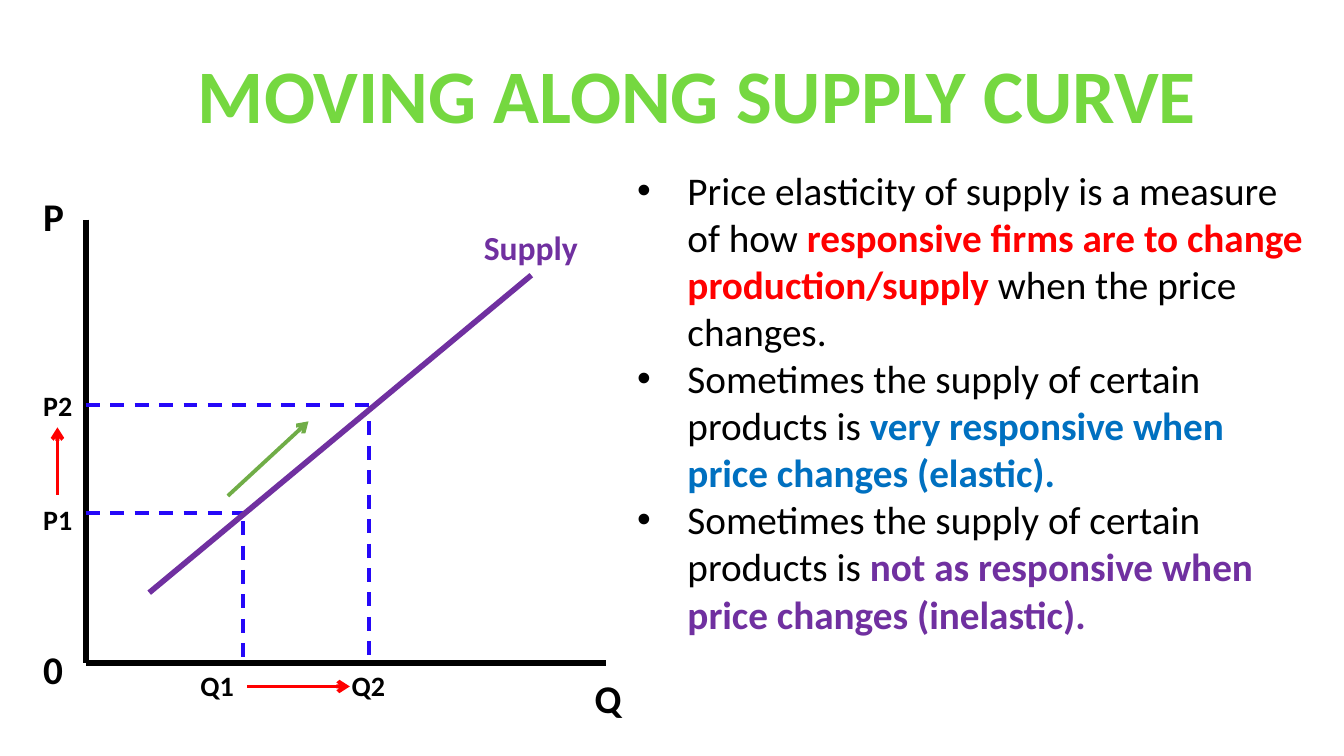
from dataclasses import dataclass

from pptx import Presentation
from pptx import util as u
from pptx.dml import color
from pptx.enum import dml, shapes, text
from pptx.oxml import ns, xmlchemy
from pptx.slide import Slide

BLACK, RED, BLUE, PURPLE = "000000", "FF0000", "2508F8", "7030A0"
GREEN, LIME, SKY = "70AD47", "75D840", "0070C0"


def rgb(value):
    return color.RGBColor.from_string(value)


@dataclass
class SlideBuilder:
    slide: Slide
    font: str = "Calibri"

    def place(self, shape, left, top, width, height):
        box = dict(left=left, top=top, width=width, height=height)
        for name, value in box.items():
            setattr(shape, name, u.Inches(value))

    def frame(self, shape):
        settings = dict(word_wrap=True, auto_size=text.MSO_AUTO_SIZE.NONE,
                        vertical_anchor=text.MSO_ANCHOR.TOP)
        for name, value in settings.items():
            setattr(shape.text_frame, name, value)
        return shape.text_frame

    def run(self, paragraph, words, size, hue=BLACK, bold=True):
        run = paragraph.add_run()
        run.text = words
        for name, value in dict(name=self.font, size=u.Pt(size), bold=bold).items():
            setattr(run.font, name, value)
        run.font.color.rgb = rgb(hue)

    def title(self, words, box, size, hue):
        shape = self.slide.shapes.title
        self.place(shape, *box)
        paragraph = self.frame(shape).paragraphs[0]
        paragraph.alignment = text.PP_ALIGN.CENTER
        self.run(paragraph, words, size, hue)

    def textbox(self, box):
        shape = self.slide.shapes.add_textbox(*map(u.Inches, box))
        return self.frame(shape)

    def label(self, words, box, size, hue=BLACK):
        self.run(self.textbox(box).paragraphs[0], words, size, hue)

    def bullets(self, items, box, size):
        """Each item is a list of (words, colour or None) runs; coloured runs are bold."""
        frame = self.textbox(box)
        for index, item in enumerate(items):
            paragraph = frame.add_paragraph() if index else frame.paragraphs[0]
            for words, hue in item:
                self.run(paragraph, words, size, hue or BLACK, bool(hue))
            properties = paragraph._p.get_or_add_pPr()
            for name, value in dict(marL=u.Inches(0.5), indent=u.Inches(-0.5)).items():
                properties.set(name, str(int(value)))
            for tag, name, value in (("a:buFont", "typeface", "Arial"),
                                     ("a:buChar", "char", "•")):
                element = xmlchemy.OxmlElement(tag)
                element.set(name, value)
                properties.append(element)

    def line(self, start, end, hue, width, dashed=False, arrow=False):
        connector = self.slide.shapes.add_connector(
            shapes.MSO_CONNECTOR.STRAIGHT, *map(u.Inches, (*start, *end)))
        connector.line.color.rgb = rgb(hue)
        connector.line.width = u.Pt(width)
        if dashed:
            connector.line.dash_style = dml.MSO_LINE.DASH
        properties = connector._element.spPr
        if arrow:
            tail = xmlchemy.OxmlElement("a:tailEnd")
            tail.set("type", "arrow")
            properties.find(ns.qn("a:ln")).append(tail)
        properties.append(xmlchemy.OxmlElement("a:effectLst"))


def main():
    presentation = Presentation()
    presentation.slide_width = u.Inches(13.33)
    presentation.slide_height = u.Inches(7.5)
    title_only = presentation.slide_layouts[5]
    builder = SlideBuilder(presentation.slides.add_slide(title_only))

    builder.title("MOVING ALONG SUPPLY CURVE", (0.87, 0.43, 12.09, 1.01), 54, LIME)

    origin = (0.85, 6.58)
    for axis_end in ((0.85, 2.18), (6.01, 6.58)):
        builder.line(axis_end, origin, BLACK, 4.5)
    for words, left, top in (("P", 0.33, 1.86), ("0", 0.33, 6.35), ("Q", 5.8, 6.64)):
        builder.label(words, (left, top, 0.42, 0.57), 28)

    guides = [((0.85, 5.09), (2.43, 5.09)), ((0.85, 4.02), (3.66, 4.02)),
              ((3.66, 4.18), (3.66, 6.56)), ((2.41, 5.17), (2.41, 6.58))]
    for start, end in guides:
        builder.line(start, end, BLUE, 2.5, dashed=True)
    for words, left, top in (("P1", 0.33, 4.94), ("P2", 0.33, 3.81),
                             ("Q1", 1.89, 6.58), ("Q2", 3.39, 6.58)):
        builder.label(words, (left, top, 0.73, 0.44), 20)

    builder.line((1.48, 5.88), (5.27, 2.73), PURPLE, 4)
    builder.label("Supply", (4.7, 2.2, 1.31, 0.5), 24, PURPLE)

    shifts = [((0.57, 4.91), (0.57, 4.24), RED), ((2.45, 6.81), (3.47, 6.81), RED),
              ((2.26, 4.92), (3.06, 4.18), GREEN)]
    for start, end, hue in shifts:
        builder.line(start, end, hue, 2.75, arrow=True)

    sometimes = ("Sometimes the supply of certain products is ", None)
    builder.bullets([
        [("Price elasticity of supply is a measure of how ", None),
         ("responsive firms are to change production/supply", RED),
         (" when the price changes.", None)],
        [sometimes, ("very responsive when price changes (elastic).", SKY)],
        [sometimes, ("not as responsive when price changes (inelastic).", PURPLE)],
    ], (6.22, 1.6, 6.85, 4.81), 28)

    presentation.save("out.pptx")


if __name__ == "__main__":
    main()
